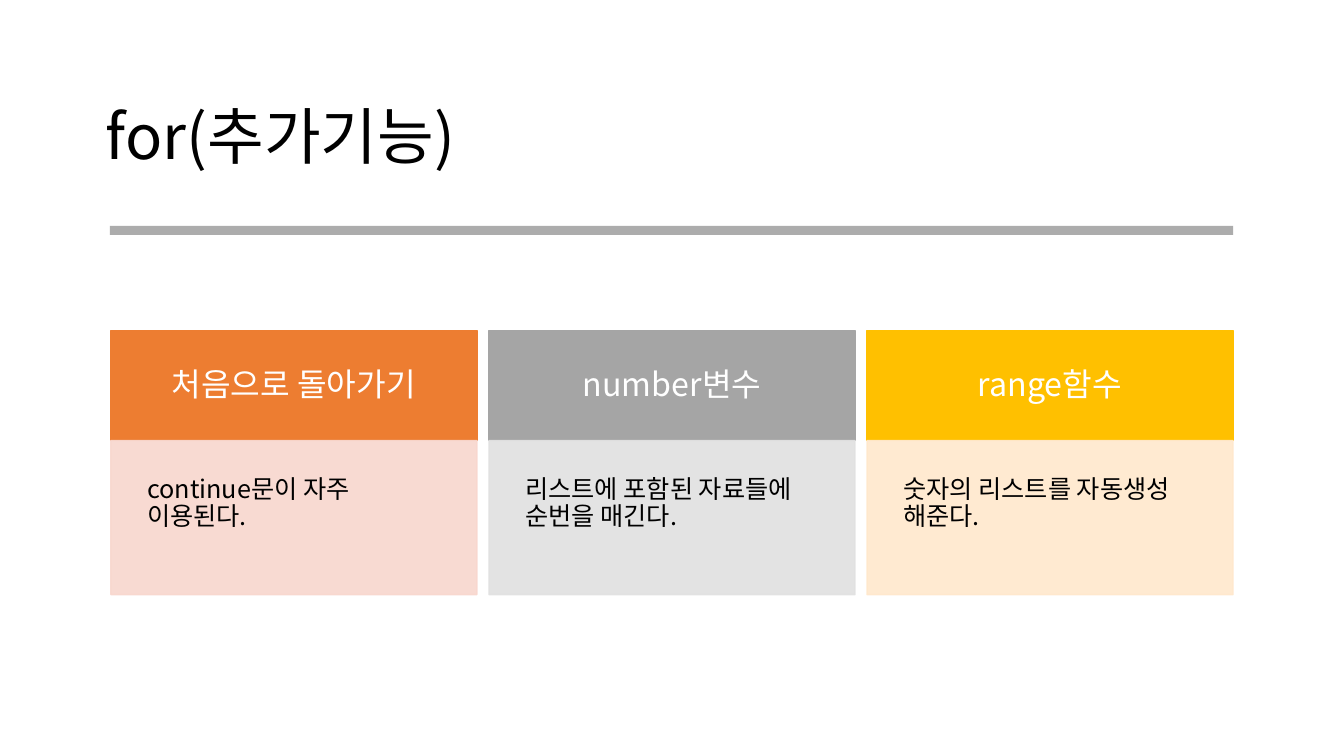
from dataclasses import dataclass

from lxml import etree
from pptx import Presentation
from pptx.dml.color import RGBColor
from pptx.enum.shapes import MSO_SHAPE
from pptx.enum.text import MSO_ANCHOR, MSO_AUTO_SIZE, PP_ALIGN
from pptx.oxml.ns import qn
from pptx.util import Inches, Pt

RECT = MSO_SHAPE.RECTANGLE
TOP, MIDDLE = MSO_ANCHOR.TOP, MSO_ANCHOR.MIDDLE
LEFT, CENTER = PP_ALIGN.LEFT, PP_ALIGN.CENTER

TITLE = "for(추가기능)"
# heading, description, heading colour, description colour
CARDS = [
    ("처음으로 돌아가기", "continue문이 자주 이용된다.", "ED7D31", "F8D7CE"),
    ("number변수", "리스트에 포함된 자료들에 순번을 매긴다.", "A5A5A5", "E1E1E1"),
    ("range함수", "숫자의 리스트를 자동생성 해준다.", "FFC000", "FFE8CC"),
]


@dataclass(frozen=True)
class Theme:
    font: str = "Noto Sans CJK KR"
    dark: str = "000000"
    light: str = "FFFFFF"
    rule: str = "808080"
    title_size: int = 44
    heading_size: int = 23
    body_size: int = 18
    line_spacing: float = 0.9


THEME = Theme()

CARD_LEFT, CARD_TOP, CARD_W, CARD_STEP = 1.1, 3.28, 3.63, 3.75
HEADING_H, BODY_H = 1.09, 1.53


def set_alpha(shape, percent):
    """Make the solid fill and line of a shape partly transparent."""
    for color in shape._element.spPr.iter(qn("a:srgbClr")):
        etree.SubElement(color, qn("a:alpha"), val=str(percent * 1000))


def add_rect(s, box, color, outlined=True):
    shape = s.shapes.add_shape(RECT, *map(Inches, box))
    shape.shadow.inherit = False
    shape.fill.solid()
    shape.fill.fore_color.rgb = RGBColor.from_string(color)
    if outlined:
        shape.line.color.rgb = RGBColor.from_string(color)
        shape.line.width = Pt(1)
    else:
        shape.line.fill.background()
    return shape


def write(shape, text, size, color, align, anchor, inset=None):
    tf = shape.text_frame
    tf.word_wrap = True
    tf.auto_size = MSO_AUTO_SIZE.NONE
    tf.vertical_anchor = anchor
    if inset is not None:
        tf.margin_left = tf.margin_right = Inches(inset)
        tf.margin_top = tf.margin_bottom = Inches(inset)
    p = tf.paragraphs[0]
    p.alignment = align
    p.line_spacing = THEME.line_spacing
    r = p.add_run()
    r.text = text
    r.font.size = Pt(size)
    r.font.name = THEME.font
    r.font.color.rgb = RGBColor.from_string(color)
    etree.SubElement(r.font._element, qn("a:ea"), typeface=THEME.font)


def add_card(s, left, heading, body, heading_color, body_color):
    head = add_rect(s, (left, CARD_TOP, CARD_W, HEADING_H), heading_color)
    write(head, heading, THEME.heading_size, THEME.light, CENTER, MIDDLE, 0.29)
    panel = add_rect(s, (left, CARD_TOP + HEADING_H, CARD_W, BODY_H), body_color)
    set_alpha(panel, 90)
    write(panel, body, THEME.body_size, THEME.dark, LEFT, TOP, 0.36)


def main():
    prs = Presentation()
    prs.slide_width, prs.slide_height = Inches(13.33), Inches(7.5)
    s = prs.slides.add_slide(prs.slide_layouts[5])

    title = s.shapes.title
    title.left, title.top = Inches(0.95), Inches(0.66)
    title.width, title.height = Inches(11.43), Inches(1.45)
    write(title, TITLE, THEME.title_size, THEME.dark, LEFT, MIDDLE)

    rule = add_rect(s, (1.09, 2.24, 11.14, 0.09), THEME.rule, outlined=False)
    set_alpha(rule, 65)

    for i, card in enumerate(CARDS):
        add_card(s, CARD_LEFT + i * CARD_STEP, *card)

    prs.save("out.pptx")


if __name__ == "__main__":
    main()
